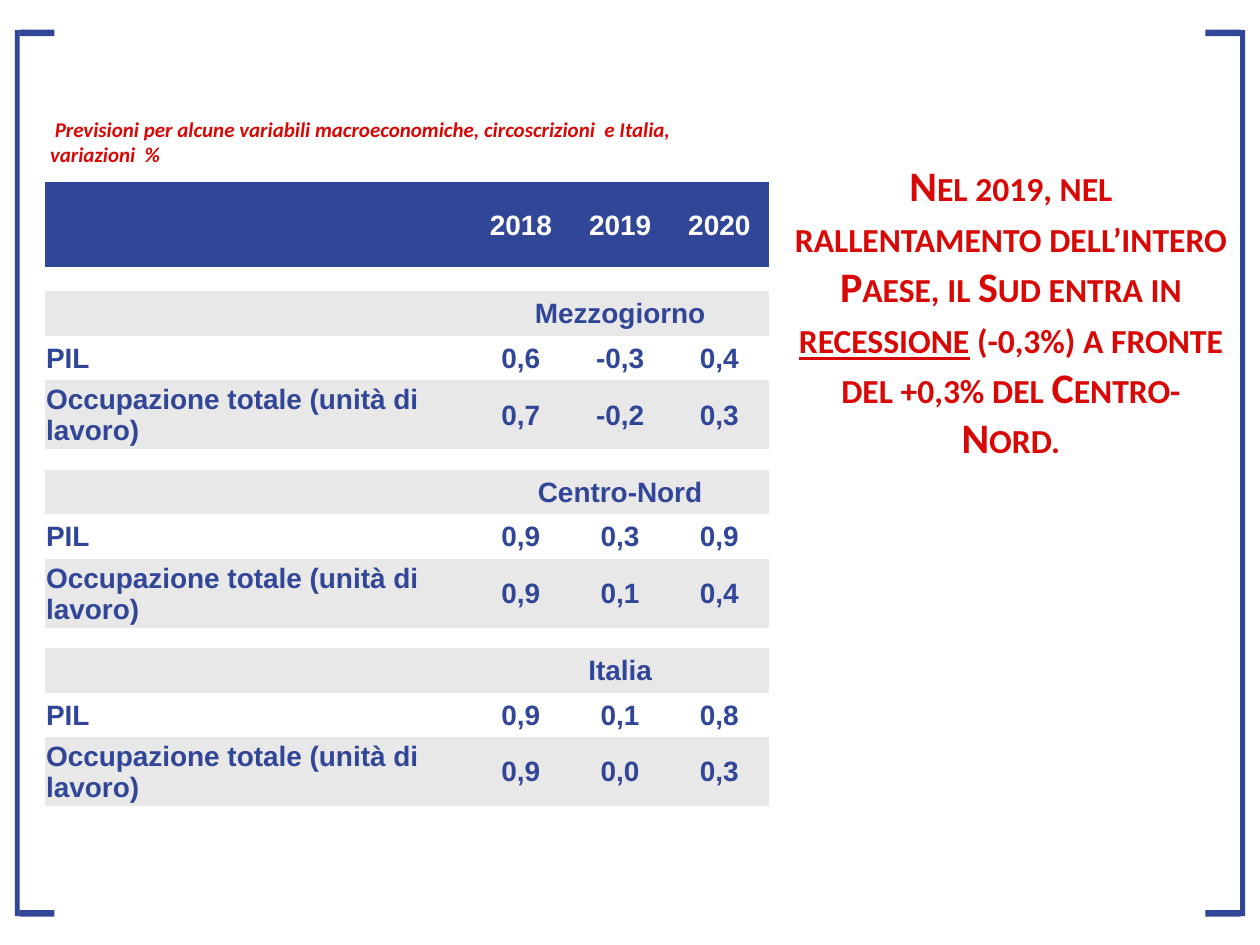
from lxml import etree
from pptx import Presentation, util as u
from pptx.dml.color import RGBColor
from pptx.enum import shapes, text
from pptx.oxml.ns import qn

BLUE, RED, GREY, WHITE = "314697", "D70805", "E8E8E8", "FFFFFF"
SLIDE_WIDTH, SLIDE_HEIGHT = 25.4, 19.05
COLUMN_WIDTHS = (8.6, 2.0, 2.0, 2.0)
PLAIN_TABLE_STYLE = "{2D5ABB26-0587-4C30-8999-92F81FD0307C}"
YEARS = ("2018", "2019", "2020")
EMPLOYMENT = "Occupazione totale (unità di lavoro)"
FORECASTS = {
    "Mezzogiorno": {"PIL": ("0,6", "-0,3", "0,4"), EMPLOYMENT: ("0,7", "-0,2", "0,3")},
    "Centro-Nord": {"PIL": ("0,9", "0,3", "0,9"), EMPLOYMENT: ("0,9", "0,1", "0,4")},
    "Italia": {"PIL": ("0,9", "0,1", "0,8"), EMPLOYMENT: ("0,9", "0,0", "0,3")},
}


def color(hex_value):
    return RGBColor.from_string(hex_value)


def add_text(paragraph, content, size=16, font="Arial", fill=BLUE, italic=None,
             underline=None, small_caps=False, align=None):
    """Append one bold run to the paragraph."""
    if align is not None:
        paragraph.alignment = align
    run = paragraph.add_run()
    run.text = content
    run.font.size, run.font.name = u.Pt(size), font
    run.font.bold, run.font.italic, run.font.underline = True, italic, underline
    run.font.color.rgb = color(fill)
    if small_caps:
        run.font._element.set("cap", "small")


def add_text_box(slide, left, top, width, height):
    """Add a wrapping text box and return its first paragraph."""
    box = slide.shapes.add_textbox(u.Cm(left), u.Cm(top), u.Cm(width), u.Cm(height))
    box.text_frame.word_wrap = True
    box.text_frame.auto_size = text.MSO_AUTO_SIZE.SHAPE_TO_FIT_TEXT
    return box.text_frame.paragraphs[0]


def add_bracket(slide, mirrored):
    """Add a square bracket along the left edge, or the right one if mirrored."""
    group = slide.shapes.add_group_shape()
    for left, top, width, height in ((0.3, 0.61, 0.1, 17.86),
                                     (0.39, 0.6, 0.71, 0.13),
                                     (0.39, 18.35, 0.71, 0.13)):
        if mirrored:
            left = SLIDE_WIDTH - left - width
        bar = group.shapes.add_shape(shapes.MSO_SHAPE.RECTANGLE, u.Cm(left), u.Cm(top),
                                     u.Cm(width), u.Cm(height))
        bar.shadow.inherit = False
        bar.fill.solid()
        bar.fill.fore_color.rgb = color(BLUE)
        bar.line.fill.background()


def fill_cell(cell, content, background, font_color, align):
    cell.fill.solid()
    cell.fill.fore_color.rgb = color(background)
    cell.vertical_anchor = text.MSO_ANCHOR.MIDDLE
    cell.margin_left = cell.margin_right = cell.margin_top = u.Cm(0.03)
    cell.margin_bottom = 0
    paragraph = cell.text_frame.paragraphs[0]
    if content:
        add_text(paragraph, content, fill=font_color, align=align)
    else:
        # A small paragraph mark lets empty rows stay low.
        etree.SubElement(paragraph._p, qn("a:endParaRPr"), sz="600")


def table_rows():
    """List the rows as (height, background, font colour, cell texts)."""
    blank = ("",) * len(COLUMN_WIDTHS)
    rows = [(1.72, BLUE, WHITE, ("", *YEARS))]
    for area, variables in FORECASTS.items():
        gap = 0.48 if len(rows) == 1 else 0.41
        rows.append((gap, WHITE, BLUE, blank))
        rows.append((0.9, GREY, BLUE, ("", area, "", "")))
        for name, values in variables.items():
            height, background = (1.38, GREY) if name == EMPLOYMENT else (0.9, WHITE)
            rows.append((height, background, BLUE, (name, *values)))
    return rows


def add_forecast_table(slide):
    rows = table_rows()
    frame = slide.shapes.add_table(
        len(rows), len(COLUMN_WIDTHS), u.Cm(0.9), u.Cm(3.67),
        u.Cm(sum(COLUMN_WIDTHS)), u.Cm(sum(row[0] for row in rows)))
    table = frame.table
    table.first_row = table.horz_banding = False
    table._tbl.tblPr.find(qn("a:tableStyleId")).text = PLAIN_TABLE_STYLE
    for column, width in zip(table.columns, COLUMN_WIDTHS):
        column.width = u.Cm(width)
    for index, (height, background, font_color, contents) in enumerate(rows):
        table.rows[index].height = u.Cm(height)
        for column, content in enumerate(contents):
            align = text.PP_ALIGN.CENTER if column else text.PP_ALIGN.LEFT
            fill_cell(table.cell(index, column), content, background, font_color, align)
        if contents[1] in FORECASTS:
            table.cell(index, 1).merge(table.cell(index, len(YEARS)))


def add_caption(slide):
    paragraph = add_text_box(slide, 0.76, 2.26, 14.5, 1.24)
    paragraph.line_spacing = 0.97
    add_text(paragraph, " Previsioni per alcune variabili macroeconomiche, circoscrizioni  "
             "e Italia, variazioni  %", size=12, font="Calibri", fill=RED, italic=True)


def add_message(slide):
    paragraph = add_text_box(slide, 15.77, 3.1, 9.22, 6.4)
    for content, underline in (
            ("Nel 2019, nel rallentamento dell’intero Paese, il Sud entra in ", None),
            ("recessione", True),
            (" (-0,3%) a fronte del +0,3% del Centro-Nord.", None)):
        add_text(paragraph, content, size=24, font="Calibri", fill=RED, small_caps=True,
                 underline=underline, align=text.PP_ALIGN.CENTER)


def main():
    presentation = Presentation()
    presentation.slide_width = u.Cm(SLIDE_WIDTH)
    presentation.slide_height = u.Cm(SLIDE_HEIGHT)
    slide = presentation.slides.add_slide(presentation.slide_layouts[6])
    add_caption(slide)
    add_forecast_table(slide)
    add_message(slide)
    for mirrored in (False, True):
        add_bracket(slide, mirrored)
    presentation.save("out.pptx")


if __name__ == "__main__":
    main()
